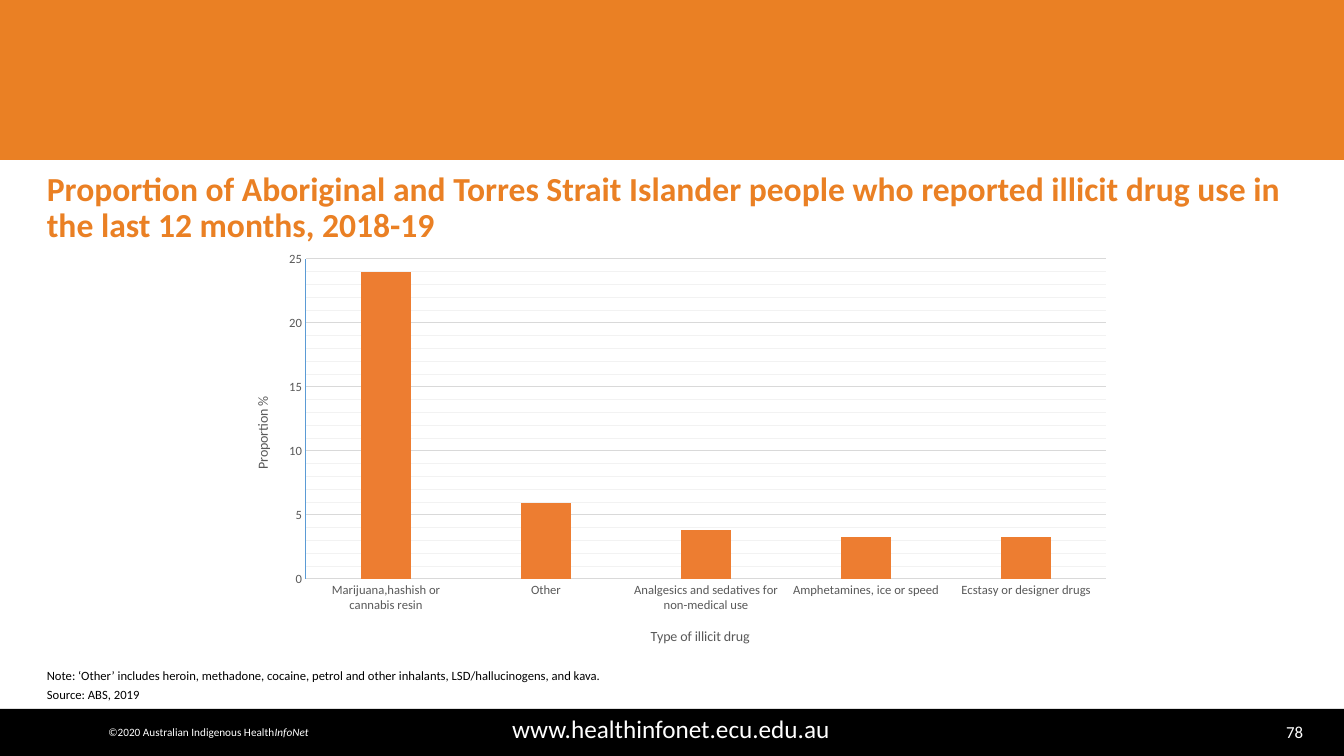
from dataclasses import dataclass

from lxml.etree import SubElement
from pptx import Presentation
from pptx.chart.data import CategoryChartData
from pptx.dml.color import RGBColor
from pptx.enum.chart import XL_CHART_TYPE as ChartType, XL_TICK_MARK as TickMark
from pptx.enum.shapes import MSO_SHAPE as Shape
from pptx.enum.text import MSO_ANCHOR as Anchor, PP_ALIGN as Align
from pptx.oxml import parse_xml
from pptx.oxml.ns import nsdecls, qn
from pptx.util import Pt


@dataclass(frozen=True)
class Theme:
    font: str = "Calibri"
    orange: str = "EA8024"
    bar: str = "ED7D31"
    black: str = "000000"
    white: str = "FFFFFF"
    label: str = "595959"
    grid: str = "D9D9D9"
    minor_grid: str = "F2F2F2"
    value_line: str = "5B9BD5"
    heading_size: int = 24
    website_size: int = 18
    number_size: int = 12
    axis_title_size: int = 10
    small_size: int = 9
    copyright_size: int = 8


THEME = Theme()
SLIDE = (1344, 756)
EMU_PER_PX = 914400 / 100.8

BANDS = [
    ((-3, 0, 1347, 160), THEME.orange),
    ((0, 709, 1344, 47), THEME.black),
]

TEXTS = [
    dict(box=(1205, 717, 108, 30), paragraphs=[[("78", False)]],
         size=THEME.number_size, color=THEME.white, align=Align.RIGHT, anchor=Anchor.MIDDLE),
    dict(box=(62, 709, 1218, 39), paragraphs=[[("www.healthinfonet.ecu.edu.au", False)]],
         size=THEME.website_size, color=THEME.white, align=Align.CENTER, anchor=Anchor.MIDDLE),
    dict(box=(93, 720, 231, 24),
         paragraphs=[[("©2020 Australian Indigenous Health", False), ("InfoNet", True)]],
         size=THEME.copyright_size, color=THEME.white, align=Align.CENTER, wrap=False),
    dict(box=(37, 166, 1270, 85),
         paragraphs=[[("Proportion of Aboriginal and Torres Strait Islander people who reported "
                       "illicit drug use in the last 12 months, 2018-19", False)]],
         size=THEME.heading_size, color=THEME.orange, bold=True, line_spacing=0.9,
         anchor=Anchor.MIDDLE),
    dict(box=(37, 663, 1270, 47),
         paragraphs=[
             [("Note: ‘Other’ includes heroin, methadone, cocaine, petrol and other inhalants, "
               "LSD/hallucinogens, and kava.", False)],
             [("Source: ABS, 2019", False)],
         ],
         size=THEME.small_size, color=THEME.black, space_after=3),
]

DRUG_USE = {
    "Marijuana,hashish or cannabis resin": 24,
    "Other": 5.9,
    "Analgesics and sedatives for non-medical use": 3.8,
    "Amphetamines, ice or speed": 3.3,
    "Ecstasy or designer drugs": 3.3,
}
CHART_BOX = (228, 243, 897, 420)
PLOT_BOX = (306, 259, 800, 320)
DRUG_TITLE = ("Type of illicit drug", (648, 625))
PROPORTION_TITLE = ("Proportion %", (251, 394))


def emu(lengths):
    return [round(px * EMU_PER_PX) for px in lengths]


def rgb(color):
    return RGBColor.from_string(color)


def style_font(font, size, color, bold=False, italic=False):
    font.name, font.size, font.bold, font.italic = THEME.font, Pt(size), bold, italic
    font.color.rgb = rgb(color)


def style_line(line, color):
    line.color.rgb = rgb(color)
    line.width = Pt(0.75)


def add_band(slide, box, color):
    band = slide.shapes.add_shape(Shape.RECTANGLE, *emu(box))
    band.shadow.inherit = False
    band.fill.solid()
    band.fill.fore_color.rgb = rgb(color)
    band.line.fill.background()


def add_text(slide, box, paragraphs, size, color, bold=False, align=Align.LEFT,
             anchor=Anchor.TOP, wrap=True, line_spacing=None, space_after=0):
    frame = slide.shapes.add_textbox(*emu(box)).text_frame
    frame.word_wrap = wrap
    frame.vertical_anchor = anchor
    for index, runs in enumerate(paragraphs):
        paragraph = frame.add_paragraph() if index else frame.paragraphs[0]
        paragraph.alignment = align
        paragraph.line_spacing = line_spacing
        paragraph.space_after = Pt(space_after)
        for words, italic in runs:
            run = paragraph.add_run()
            run.text = words
            style_font(run.font, size, color, bold, italic)


def manual_layout(left, top, width=None, height=None):
    chart_left, chart_top, chart_width, chart_height = CHART_BOX
    layout = parse_xml(f"<c:layout {nsdecls('c')}><c:manualLayout/></c:layout>")
    settings = {"xMode": "edge", "yMode": "edge",
                "x": (left - chart_left) / chart_width,
                "y": (top - chart_top) / chart_height}
    if width:
        settings = {"layoutTarget": "inner", **settings,
                    "w": width / chart_width, "h": height / chart_height}
    for tag, setting in settings.items():
        SubElement(layout[0], qn(f"c:{tag}")).set("val", str(setting))
    return layout


def drop_layout(parent):
    for layout in parent.findall(qn("c:layout")):
        parent.remove(layout)


def style_axis(axis, title, line_color):
    words, corner = title
    axis.major_tick_mark = axis.minor_tick_mark = TickMark.NONE
    style_font(axis.tick_labels.font, THEME.small_size, THEME.label)
    style_line(axis.format.line, line_color)
    run = axis.axis_title.text_frame.paragraphs[0].add_run()
    run.text = words
    style_font(run.font, THEME.axis_title_size, THEME.label)
    title_xml = axis.axis_title._element
    drop_layout(title_xml)
    title_xml.find(qn("c:tx")).addnext(manual_layout(*corner))


def style_minor_grid(axis):
    axis.has_minor_gridlines = True
    axis._element.find(qn("c:minorGridlines")).append(parse_xml(
        f"<c:spPr {nsdecls('c', 'a')}><a:ln w='{Pt(0.75)}'><a:solidFill>"
        f"<a:srgbClr val='{THEME.minor_grid}'/></a:solidFill></a:ln></c:spPr>"))


def add_drug_chart(slide):
    drug_data = CategoryChartData()
    drug_data.categories = list(DRUG_USE)
    drug_data.add_series("Series 1", list(DRUG_USE.values()))
    chart = slide.shapes.add_chart(ChartType.COLUMN_CLUSTERED, *emu(CHART_BOX), drug_data).chart
    chart.has_legend = chart.has_title = False
    style_font(chart.font, THEME.axis_title_size, THEME.black)

    columns = chart.plots[0]
    columns.vary_by_categories = False
    columns.gap_width, columns.overlap = 219, -27
    fill = columns.series[0].format.fill
    fill.solid()
    fill.fore_color.rgb = rgb(THEME.bar)

    style_axis(chart.category_axis, DRUG_TITLE, THEME.grid)
    proportion = chart.value_axis
    style_axis(proportion, PROPORTION_TITLE, THEME.value_line)
    proportion.minimum_scale, proportion.maximum_scale = 0, 25
    proportion.major_unit, proportion.minor_unit = 5, 1
    proportion.has_major_gridlines = True
    style_line(proportion.major_gridlines.format.line, THEME.grid)
    style_minor_grid(proportion)

    plot_area = chart._chartSpace.chart.plotArea
    drop_layout(plot_area)
    plot_area.insert(0, manual_layout(*PLOT_BOX))


def main():
    deck = Presentation()
    deck.slide_width, deck.slide_height = emu(SLIDE)
    slide = deck.slides.add_slide(deck.slide_layouts[6])
    for box, color in BANDS:
        add_band(slide, box, color)
    for text in TEXTS:
        add_text(slide, **text)
    add_drug_chart(slide)
    deck.save("out.pptx")


if __name__ == "__main__":
    main()
